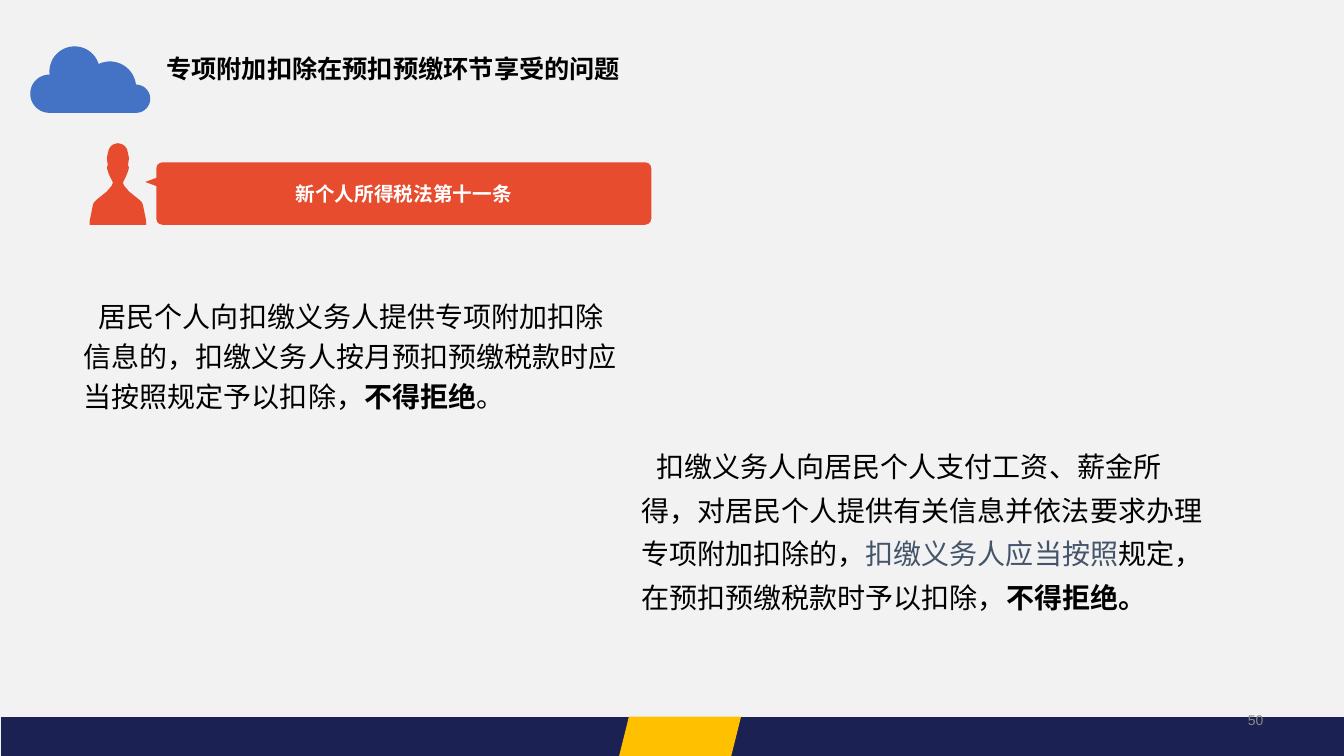
from dataclasses import dataclass
from math import cos, radians, sin

from lxml import etree
from pptx import Presentation
from pptx.dml.color import RGBColor
from pptx.enum.shapes import MSO_SHAPE
from pptx.enum.text import MSO_ANCHOR, PP_ALIGN
from pptx.oxml.ns import qn
from pptx.util import Inches, Pt

PARALLELOGRAM = MSO_SHAPE.PARALLELOGRAM
ROUNDED = MSO_SHAPE.ROUNDED_RECTANGLE
TRIANGLE = MSO_SHAPE.ISOSCELES_TRIANGLE
LEFT, CENTER, RIGHT = PP_ALIGN.LEFT, PP_ALIGN.CENTER, PP_ALIGN.RIGHT
TOP, MIDDLE = MSO_ANCHOR.TOP, MSO_ANCHOR.MIDDLE


@dataclass(frozen=True)
class Theme:
    background: str = "F2F2F2"
    cloud: str = "4472C4"
    footer: str = "1B2153"
    accent: str = "FFC000"
    callout: str = "E74C2E"
    text: str = "000000"
    emphasis: str = "44546A"
    white: str = "FFFFFF"
    muted: str = "898989"
    cjk: str = "Noto Sans CJK SC"
    latin: str = "Arial"
    title_size: int = 18
    callout_size: int = 14
    body_size: int = 20
    number_size: int = 10


THEME = Theme()

# Lobes of the cloud, clockwise: centre x, centre y, radius, start and end angle
CLOUD_LOBES = [
    (0.49, 0.93, 0.19, 90, 270),
    (0.74, 0.71, 0.25, 173, 346),
    (1.09, 0.87, 0.26, 243, 351),
    (1.35, 0.98, 0.14, 270, 450),
]
PERSON_AXIS = 1.17
# Right half of the person, from crown to base: distance from the axis, y
PERSON_HALF = [
    (0, 1.42), (0.04, 1.43), (0.07, 1.45), (0.09, 1.48), (0.1, 1.52),
    (0.11, 1.57), (0.1, 1.64), (0.11, 1.66), (0.1, 1.7), (0.08, 1.75),
    (0.05, 1.81), (0.06, 1.84), (0.11, 1.9), (0.21, 1.98), (0.24, 2.01),
    (0.25, 2.04), (0.28, 2.19), (0.28, 2.23),
]


def rgb(colour):
    return RGBColor.from_string(colour)


def paint(shape, colour):
    shape.shadow.inherit = False
    shape.fill.solid()
    shape.fill.fore_color.rgb = rgb(colour)
    shape.line.fill.background()
    return shape


def add_block(slide, kind, box, colour, adjustment, rotation=0):
    block = slide.shapes.add_shape(kind, *map(Inches, box))
    block.adjustments[0] = adjustment
    block.rotation = rotation
    return paint(block, colour)


def add_outline(slide, points, colour):
    corners = [(Inches(x), Inches(y)) for x, y in points]
    builder = slide.shapes.build_freeform(*corners[0])
    builder.add_line_segments(corners[1:])
    return paint(builder.convert_to_shape(), colour)


def arc(x, y, radius, start, end, steps=24):
    angles = [radians(start + (end - start) * i / steps) for i in range(steps + 1)]
    return [(x + radius * cos(a), y + radius * sin(a)) for a in angles]


def add_cloud(slide):
    outline = [point for lobe in CLOUD_LOBES for point in arc(*lobe)]
    add_outline(slide, outline, THEME.cloud)


def add_person(slide):
    right = [(PERSON_AXIS + dx, y) for dx, y in PERSON_HALF]
    left = [(PERSON_AXIS - dx, y) for dx, y in reversed(PERSON_HALF)]
    add_outline(slide, right + left, THEME.callout)


def write(shape, pieces, *, size, colour=THEME.text, bold=False, font=THEME.latin,
          align=LEFT, anchor=TOP, spacing=1.0, indent=0, margins=(0.13, 0.07)):
    """Fill a shape with one paragraph of (text, format overrides) pieces."""
    frame = shape.text_frame
    frame.word_wrap = True
    frame.vertical_anchor = anchor
    frame.margin_left = frame.margin_right = Inches(margins[0])
    frame.margin_top = frame.margin_bottom = Inches(margins[1])
    paragraph = frame.paragraphs[0]
    paragraph.alignment = align
    paragraph.line_spacing = spacing
    properties = paragraph._p.get_or_add_pPr()
    properties.set("indent", str(Inches(indent)))
    properties.set("hangingPunct", "0")
    for text, override in pieces:
        run = paragraph.add_run()
        run.text = text
        run.font.size = Pt(size)
        run.font.name = font
        run.font.bold = override.get("bold", bold)
        run.font.color.rgb = rgb(override.get("colour", colour))
        east_asian = etree.SubElement(run._r.get_or_add_rPr(), qn("a:ea"))
        east_asian.set("typeface", font)


def add_text(slide, box, pieces, **text_format):
    write(slide.shapes.add_textbox(*map(Inches, box)), pieces, **text_format)


def add_callout(slide, text):
    add_person(slide)
    banner = add_block(slide, ROUNDED, (1.55, 1.61, 4.91, 0.62), THEME.callout, 0.1)
    write(banner, [(text, {})], size=THEME.callout_size, colour=THEME.white,
          bold=True, font=THEME.cjk, align=CENTER, anchor=MIDDLE, margins=(0, 0))
    add_block(slide, TRIANGLE, (1.46, 1.73, 0.11, 0.15), THEME.callout, 0.5, 270)


def add_footer(slide):
    edges = [(0.01, 7.11), (13.34, 7.11), (13.34, 7.5), (0.01, 7.5)]
    add_outline(slide, edges, THEME.footer)
    add_block(slide, PARALLELOGRAM, (6.14, 7.11, 1.21, 0.39), THEME.accent, 0.25)


def main():
    deck = Presentation()
    deck.slide_width, deck.slide_height = Inches(13.33), Inches(7.5)
    slide = deck.slides.add_slide(deck.slide_layouts[6])
    slide.background.fill.solid()
    slide.background.fill.fore_color.rgb = rgb(THEME.background)

    add_cloud(slide)
    add_footer(slide)
    add_text(slide, (1.52, 0.49, 10.37, 0.58),
             [("专项附加扣除在预扣预缴环节享受的问题", {})],
             size=THEME.title_size, bold=True, font=THEME.cjk, spacing=0.9)
    add_callout(slide, "新个人所得税法第十一条")
    add_text(slide, (0.7, 2.83, 5.67, 1.33), [
        ("居民个人向扣缴义务人提供专项附加扣除信息的，"
         "扣缴义务人按月预扣预缴税款时应当按照规定予以扣除，", {}),
        ("不得拒绝", {"bold": True}),
        ("。", {}),
    ], size=THEME.body_size, spacing=1.2, indent=0.15)
    add_text(slide, (6.23, 4.29, 5.94, 2.22), [
        ("扣缴义务人向居民个人支付工资、薪金所得，"
         "对居民个人提供有关信息并依法要求办理专项附加扣除的，", {}),
        ("扣缴义务人应当按照", {"colour": THEME.emphasis}),
        ("规定，在预扣预缴税款时予以扣除，", {}),
        ("不得拒绝。", {"bold": True}),
    ], size=THEME.body_size, spacing=1.3, indent=0.15)
    add_text(slide, (9.55, 6.95, 3.11, 0.4), [("50", {})], size=THEME.number_size,
             colour=THEME.muted, align=RIGHT, anchor=MIDDLE, spacing=0.9)
    deck.save("out.pptx")


if __name__ == "__main__":
    main()
